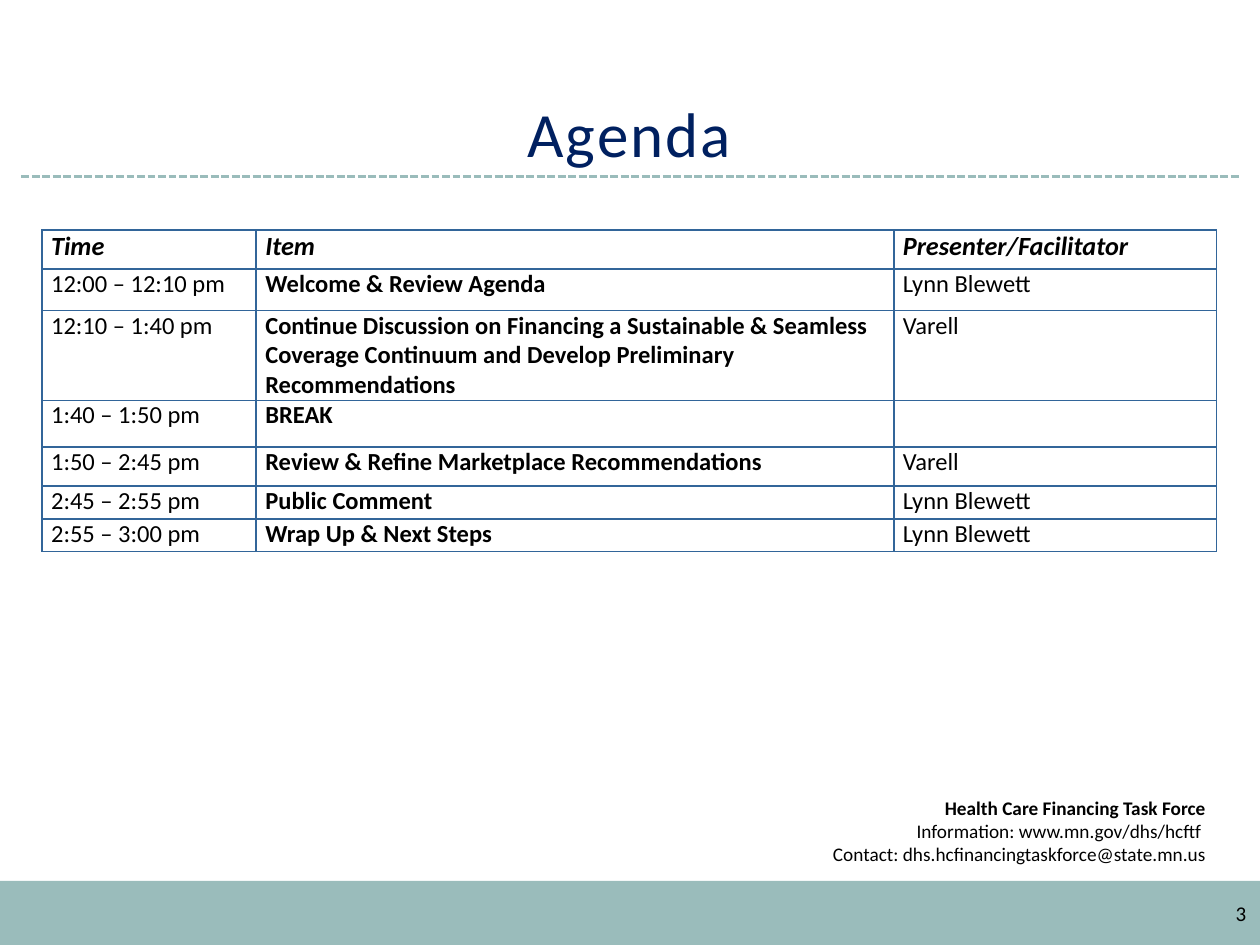
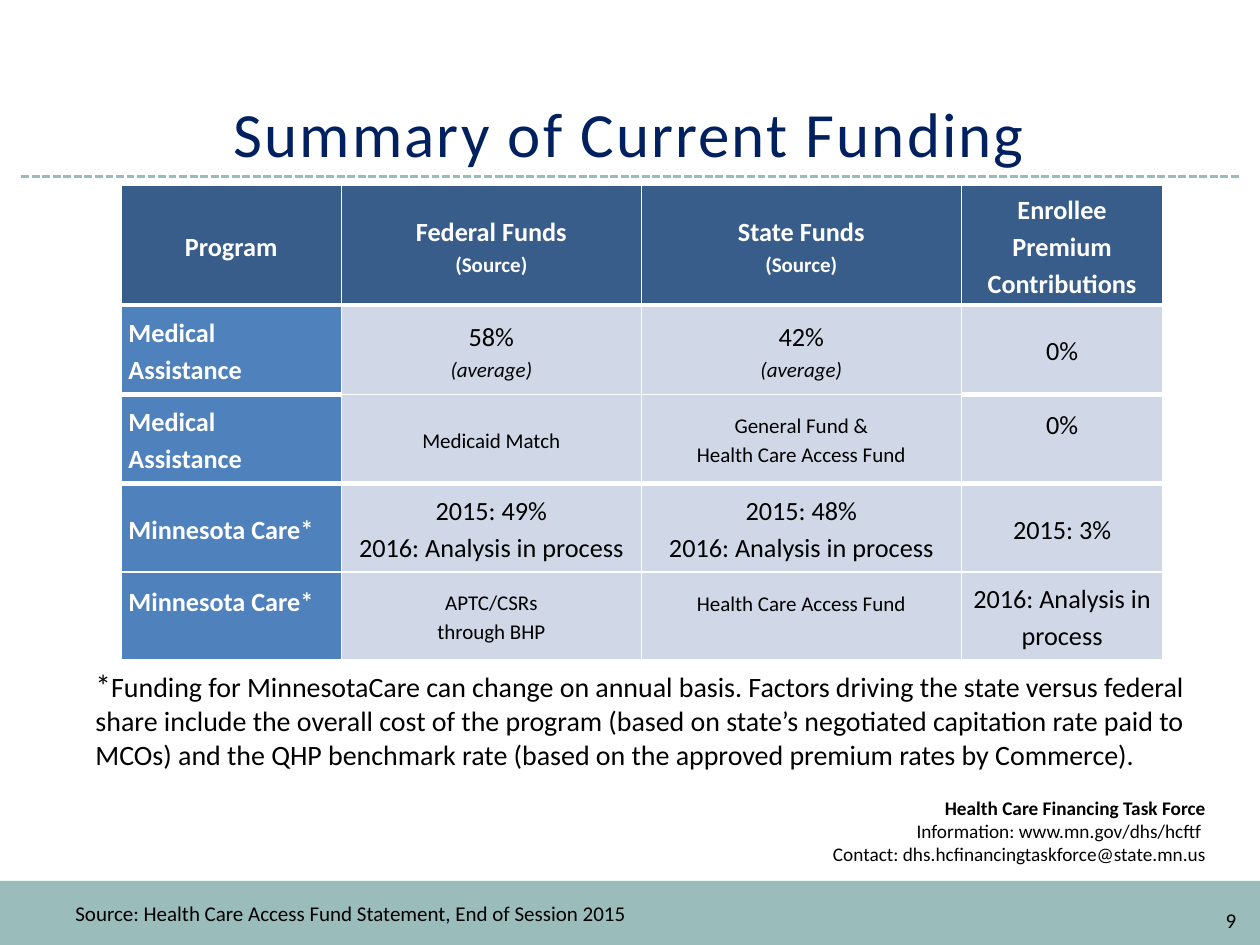
from dataclasses import dataclass
from typing import Any

from lxml.etree import SubElement
from pptx import Presentation
from pptx.dml.color import RGBColor
from pptx.enum.dml import MSO_LINE_DASH_STYLE as Dash
from pptx.enum.shapes import MSO_CONNECTOR as Connector, MSO_SHAPE as Shape
from pptx.enum.text import MSO_ANCHOR as Anchor, MSO_AUTO_SIZE as AutoSize, PP_ALIGN as Align
from pptx.oxml.ns import qn
from pptx.util import Pt

FONT = "Calibri"
COLORS = {
    "band": "9ABCBB",
    "title": "002060",
    "text": "000000",
    "white": "FFFFFF",
    "agenda_border": "326599",
    "header": "385D8A",
    "program": "4F81BD",
    "funds": "D0D8E8",
}
FORMATS: dict[str, dict[str, Any]] = {
    "title": {"size": Pt(36), "color": "title"},
    "contact": {"size": Pt(11)},
    "contact_head": {"size": Pt(11), "bold": True},
    "footer": {"size": Pt(12)},
    "footnote": {"size": Pt(16)},
    "footnote_mark": {"size": Pt(18)},
    "agenda_head": {"size": Pt(15), "bold": True, "italic": True},
    "agenda": {"size": Pt(14)},
    "agenda_item": {"size": Pt(14), "bold": True},
    "program": {"size": Pt(15), "bold": True, "color": "white"},
    "program_note": {"size": Pt(12), "bold": True, "color": "white"},
    "share": {"size": Pt(15)},
    "source": {"size": Pt(12)},
    "average": {"size": Pt(12), "italic": True},
}


@dataclass(frozen=True)
class Run:
    text: str
    style: str


Lines = list[list[Run]]


@dataclass(frozen=True)
class Box:
    left: float
    top: float
    width: float
    height: float

    def lengths(self) -> tuple[Pt, Pt, Pt, Pt]:
        return Pt(self.left), Pt(self.top), Pt(self.width), Pt(self.height)


@dataclass(frozen=True)
class FundingCell:
    lines: Lines
    bottom: float = 0


@dataclass(frozen=True)
class Edges:
    """Border widths of one cell, in points."""
    left: float = 1
    right: float = 1
    top: float = 1
    bottom: float = 1


TITLE = Box(23.76, 18, 671.76, 82.8)
BAND = Box(0, 503.28, 720, 36.72)
CONTACT = Box(326.88, 450.72, 369.36, 48.24)
RULE_LEFT, RULE_RIGHT, RULE_TOP = 12.24, 707.76, 100.8


def rgb(name: str) -> RGBColor:
    return RGBColor.from_string(COLORS[name])


def line(text: str, style: str) -> list[Run]:
    return [Run(text, style)]


def apply(target: Any, values: dict[str, Any]) -> None:
    for attribute, value in values.items():
        setattr(target, attribute, value)


def write(frame: Any, lines: Lines, paragraph_values: dict[str, Any]) -> None:
    for number, runs in enumerate(lines):
        paragraph = frame.paragraphs[0] if number == 0 else frame.add_paragraph()
        apply(paragraph, paragraph_values)
        for part in runs:
            run = paragraph.add_run()
            run.text = part.text
            values = {"name": FONT, **FORMATS[part.style]}
            run.font.color.rgb = rgb(values.pop("color", "text"))
            apply(run.font, values)


def add_text(slide: Any, box: Box, lines: Lines, align: Align = Align.LEFT,
             anchor: Anchor = Anchor.TOP) -> None:
    frame = slide.shapes.add_textbox(*box.lengths()).text_frame
    apply(frame, {"word_wrap": True, "vertical_anchor": anchor})
    write(frame, lines, {"alignment": align})


def add_block(slide: Any, box: Box, color: str) -> Any:
    block = slide.shapes.add_shape(Shape.RECTANGLE, *box.lengths())
    block.shadow.inherit = False
    block.fill.solid()
    block.fill.fore_color.rgb = rgb(color)
    block.line.fill.background()
    return block


def add_titled_slide(deck: Any, heading: str) -> Any:
    """Add a slide with the title, dashed rule, footer band and contact lines."""
    slide = deck.slides.add_slide(deck.slide_layouts[5])
    add_block(slide, BAND, "band")

    rule = slide.shapes.add_connector(
        Connector.STRAIGHT, Pt(RULE_LEFT), Pt(RULE_TOP), Pt(RULE_RIGHT), Pt(RULE_TOP))
    rule.line.color.rgb = rgb("band")
    apply(rule.line, {"width": Pt(1.5), "dash_style": Dash.SQUARE_DOT})
    SubElement(rule._element.spPr, qn("a:effectLst"))

    contact = add_block(slide, CONTACT, "white").text_frame
    apply(contact, {"word_wrap": True, "vertical_anchor": Anchor.MIDDLE})
    write(contact, [
        line("Health Care Financing Task Force", "contact_head"),
        line("Information: www.mn.gov/dhs/hcftf ", "contact"),
        line("Contact: dhs.hcfinancingtaskforce@state.mn.us", "contact"),
    ], {"alignment": Align.RIGHT})

    title = slide.shapes.title
    apply(title, dict(zip(("left", "top", "width", "height"), TITLE.lengths())))
    frame = title.text_frame
    apply(frame, {"word_wrap": True, "auto_size": AutoSize.NONE,
                  "vertical_anchor": Anchor.BOTTOM})
    write(frame, [line(heading, "title")],
          {"alignment": Align.CENTER, "line_spacing": Pt(40)})
    frame.paragraphs[0].runs[0].font._element.set("spc", "120")
    return slide


def add_plain_table(slide: Any, left: float, top: float, widths: list[float],
                    heights: list[float]) -> Any:
    box = Box(left, top, sum(widths), sum(heights))
    table = slide.shapes.add_table(len(heights), len(widths), *box.lengths()).table
    apply(table, {"first_row": False, "horz_banding": False})
    for column, width in zip(table.columns, widths):
        column.width = Pt(width)
    for row, height in zip(table.rows, heights):
        row.height = Pt(height)
    return table


def set_borders(cell: Any, color: str, edges: Edges) -> None:
    properties = cell._tc.get_or_add_tcPr()
    widths = {"lnL": edges.left, "lnR": edges.right, "lnT": edges.top, "lnB": edges.bottom}
    for tag, width in widths.items():
        border = SubElement(properties, qn(f"a:{tag}"), w=str(Pt(width)))
        fill = SubElement(border, qn("a:solidFill"))
        SubElement(fill, qn("a:srgbClr"), val=COLORS[color])


def set_margins(cell: Any, side: float, bottom: float = 0) -> None:
    apply(cell, {"margin_left": Pt(side), "margin_right": Pt(side),
                 "margin_top": 0, "margin_bottom": Pt(bottom)})


def build_agenda(deck: Any) -> None:
    slide = add_titled_slide(deck, "Agenda")
    agenda = [
        ("Time", "Item", "Presenter/Facilitator"),
        ("12:00 – 12:10 pm", "Welcome & Review Agenda", "Lynn Blewett"),
        ("12:10 – 1:40 pm",
         "Continue Discussion on Financing a Sustainable & Seamless Coverage Continuum "
         "and Develop Preliminary Recommendations", "Varell"),
        ("1:40 – 1:50 pm", "BREAK", ""),
        ("1:50 – 2:45 pm", "Review & Refine Marketplace Recommendations", "Varell"),
        ("2:45 – 2:55 pm", "Public Comment", "Lynn Blewett"),
        ("2:55 – 3:00 pm", "Wrap Up & Next Steps", "Lynn Blewett"),
    ]
    table = add_plain_table(slide, 24, 131.5, [122.4, 364.32, 184.32],
                            [22.32, 23.76, 51.3, 26.64, 22.32, 18.72, 18.72])
    column_styles = ("agenda", "agenda_item", "agenda")
    for r, texts in enumerate(agenda):
        for c, text in enumerate(texts):
            cell = table.cell(r, c)
            set_margins(cell, 5.2)
            set_borders(cell, "agenda_border", Edges())
            cell.fill.background()
            style = column_styles[c] if r else "agenda_head"
            spacing = {"space_after": Pt(0 if r and c == 1 else 6)}
            write(cell.text_frame, [line(text, style)] if text else [], spacing)
    add_text(slide, Box(676.8, 511.2, 42.48, 28.8), [line("3", "footer")], Align.RIGHT)


def build_funding(deck: Any) -> None:
    slide = add_titled_slide(deck, "Summary of Current Funding")
    assistance = [line("Medical Assistance", "program")]
    care = [line("Minnesota Care*", "program")]
    source_head = line("(Source)", "program_note")
    average = line("(average)", "average")
    in_process = line("2016: Analysis in process", "share")
    no_premium = [line("0%", "share")]
    funding = [
        [FundingCell([line("Program", "program")]),
         FundingCell([line("Federal Funds", "program"), source_head]),
         FundingCell([line("State Funds", "program"), source_head]),
         FundingCell([line("Enrollee Premium Contributions", "program")])],
        [FundingCell(assistance),
         FundingCell([line("58%", "share"), average]),
         FundingCell([line("42%", "share"), average]),
         FundingCell(no_premium)],
        [FundingCell(assistance),
         FundingCell([line("Medicaid Match", "source")]),
         FundingCell([line("General Fund &", "source"),
                      line("Health Care Access Fund", "source")]),
         FundingCell(no_premium, bottom=18)],
        [FundingCell(care),
         FundingCell([line("2015: 49%", "share"), in_process]),
         FundingCell([line("2015: 48%", "share"), in_process]),
         FundingCell([line("2015: 3%", "share")])],
        [FundingCell(care, bottom=18),
         FundingCell([line("APTC/CSRs", "source"), line("through BHP", "source")]),
         FundingCell([line("Health Care Access Fund", "source")], bottom=16),
         FundingCell([in_process])],
    ]
    table = add_plain_table(slide, 69.12, 105.84, [126, 171.36, 182.88, 115.2],
                            [68.4, 51.12, 51.12, 50.4, 50.4])
    outer_rules = (1, 3, 3, 3, 1.5, 1.5)
    inner_rules = (1, 3, 1, 3, 1, 1.5)
    for r, entries in enumerate(funding):
        for c, entry in enumerate(entries):
            cell = table.cell(r, c)
            rules = inner_rules if c in (1, 2) else outer_rules
            set_borders(cell, "white", Edges(top=rules[r], bottom=rules[r + 1]))
            cell.fill.solid()
            color = "header" if r == 0 else "program" if c == 0 else "funds"
            cell.fill.fore_color.rgb = rgb(color)
            set_margins(cell, 4.3, entry.bottom)
            cell.vertical_anchor = Anchor.MIDDLE
            align = Align.LEFT if r and c == 0 else Align.CENTER
            write(cell.text_frame, entry.lines, {"alignment": align, "line_spacing": 1.15})

    footnote = [
        Run("*", "footnote_mark"),
        Run("Funding for MinnesotaCare can change on annual basis. Factors driving the state "
            "versus federal share include the overall cost of the program (based on state’s "
            "negotiated capitation rate paid to MCOs) and the QHP benchmark rate (based on the "
            "approved premium rates by Commerce).", "footnote"),
    ]
    add_text(slide, Box(47.52, 379.44, 643.68, 64.8), [footnote], anchor=Anchor.BOTTOM)
    add_text(slide, Box(36, 511.2, 468, 21.6),
             [line("Source: Health Care Access Fund Statement, End of Session 2015", "footer")])
    add_text(slide, Box(545.76, 511.2, 167.76, 28.8), [line("9", "footer")],
             Align.RIGHT, Anchor.MIDDLE)


def main() -> None:
    deck = Presentation()
    apply(deck, {"slide_width": Pt(720), "slide_height": Pt(540)})
    build_agenda(deck)
    build_funding(deck)
    deck.save("out.pptx")


if __name__ == "__main__":
    main()
